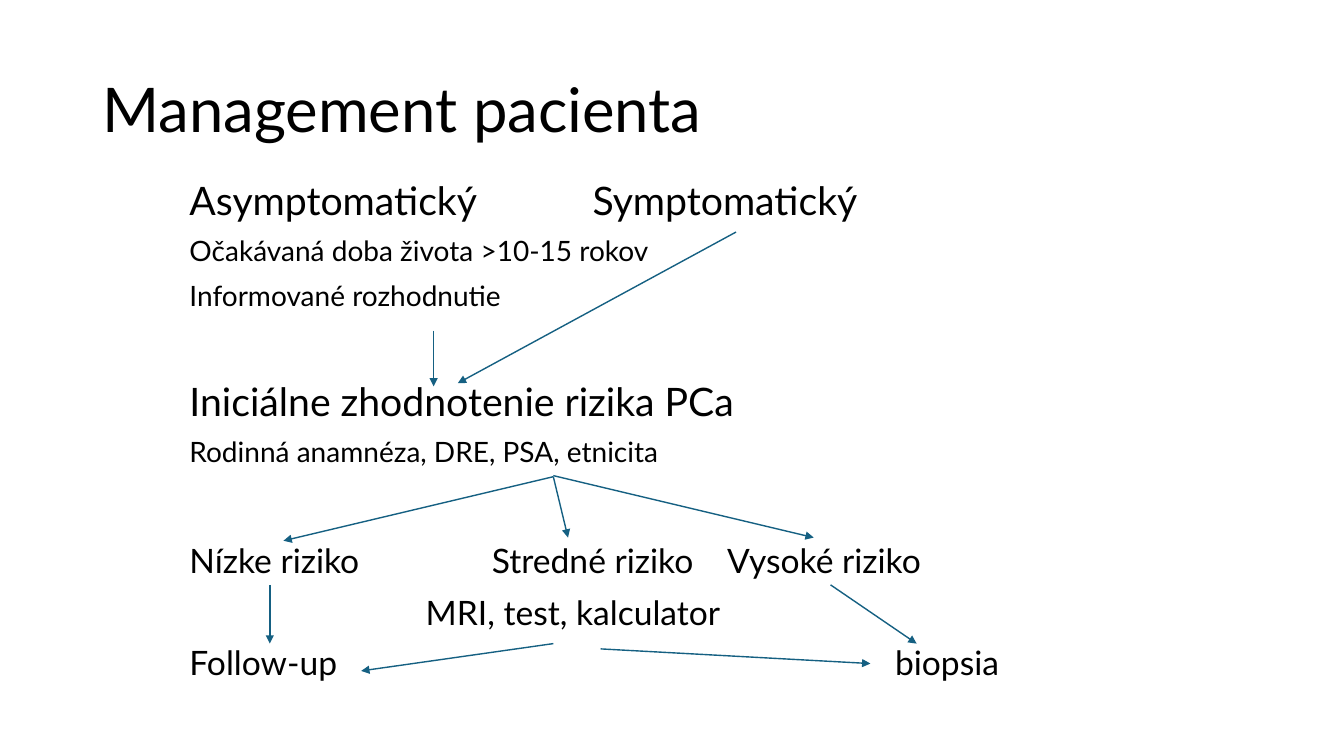
from dataclasses import dataclass

from lxml import etree
from pptx import Presentation
from pptx.dml.color import RGBColor
from pptx.enum.shapes import MSO_CONNECTOR
from pptx.enum.text import MSO_ANCHOR
from pptx.oxml.ns import qn
from pptx.util import Pt

PX = 9525
STRAIGHT = MSO_CONNECTOR.STRAIGHT
MIDDLE = MSO_ANCHOR.MIDDLE
TOP = MSO_ANCHOR.TOP


@dataclass(frozen=True)
class Theme:
    font: str = "Lato"
    ink: RGBColor = RGBColor(0x00, 0x00, 0x00)
    arrow: RGBColor = RGBColor(0x15, 0x60, 0x82)
    title: int = 44
    stage: int = 28
    outcome: int = 24
    detail: int = 20


theme = Theme()


def add_text(slide, left, top, width, height, anchor, rows):
    box = slide.shapes.add_textbox(left * PX, top * PX, width * PX, height * PX)
    frame = box.text_frame
    frame.word_wrap = True
    frame.vertical_anchor = anchor
    frame.text = "\n".join(row[0] for row in rows)
    for paragraph, (_, size, space_before, tabs) in zip(frame.paragraphs, rows):
        paragraph.line_spacing = 0.9
        paragraph.space_before = Pt(space_before)
        for run in paragraph.runs:
            run.font.name = theme.font
            run.font.size = Pt(size)
            run.font.color.rgb = theme.ink
        if tabs:
            tab_list = etree.SubElement(paragraph._p.get_or_add_pPr(), qn("a:tabLst"))
            for tab in tabs:
                etree.SubElement(tab_list, qn("a:tab"), pos=str(tab * PX), algn="l")


prs = Presentation()
prs.slide_width = 1280 * PX
prs.slide_height = 720 * PX
slide = prs.slides.add_slide(prs.slide_layouts[6])

add_text(slide, 88, 38, 1104, 139, MIDDLE, [("Management pacienta", theme.title, 0, [])])

pathway = [
    ("Asymptomatický\tSymptomatický", theme.stage, 10, [384]),
    ("Očakávaná doba života >10-15 rokov", theme.detail, 10, []),
    ("Informované rozhodnutie", theme.detail, 10, []),
    ("Iniciálne zhodnotenie rizika PCa", theme.stage, 50, []),
    ("Rodinná anamnéza, DRE, PSA, etnicita", theme.detail, 10, []),
    ("Nízke riziko\tStredné riziko\tVysoké riziko", theme.outcome, 54, [288, 512]),
    ("\tMRI, test, kalculator", theme.outcome, 11, [225]),
    ("Follow-up\tbiopsia", theme.outcome, 10, [672]),
]
add_text(slide, 171, 168, 948, 552, TOP, pathway)

arrows = [
    (413, 315, 413, 368),
    (701, 221, 436, 365),
    (527, 454, 270, 515),
    (527, 454, 541, 512),
    (527, 453, 775, 512),
    (572, 618, 829, 632),
    (527, 613, 344, 639),
    (257, 557, 257, 613),
    (791, 557, 873, 613),
]
for ends in arrows:
    arrow = slide.shapes.add_connector(STRAIGHT, *(end * PX for end in ends))
    arrow.line.color.rgb = theme.arrow
    arrow.line.width = Pt(1)
    etree.SubElement(arrow.line._get_or_add_ln(), qn("a:tailEnd"), type="triangle")
    etree.SubElement(arrow._element.spPr, qn("a:effectLst"))

prs.save("out.pptx")
